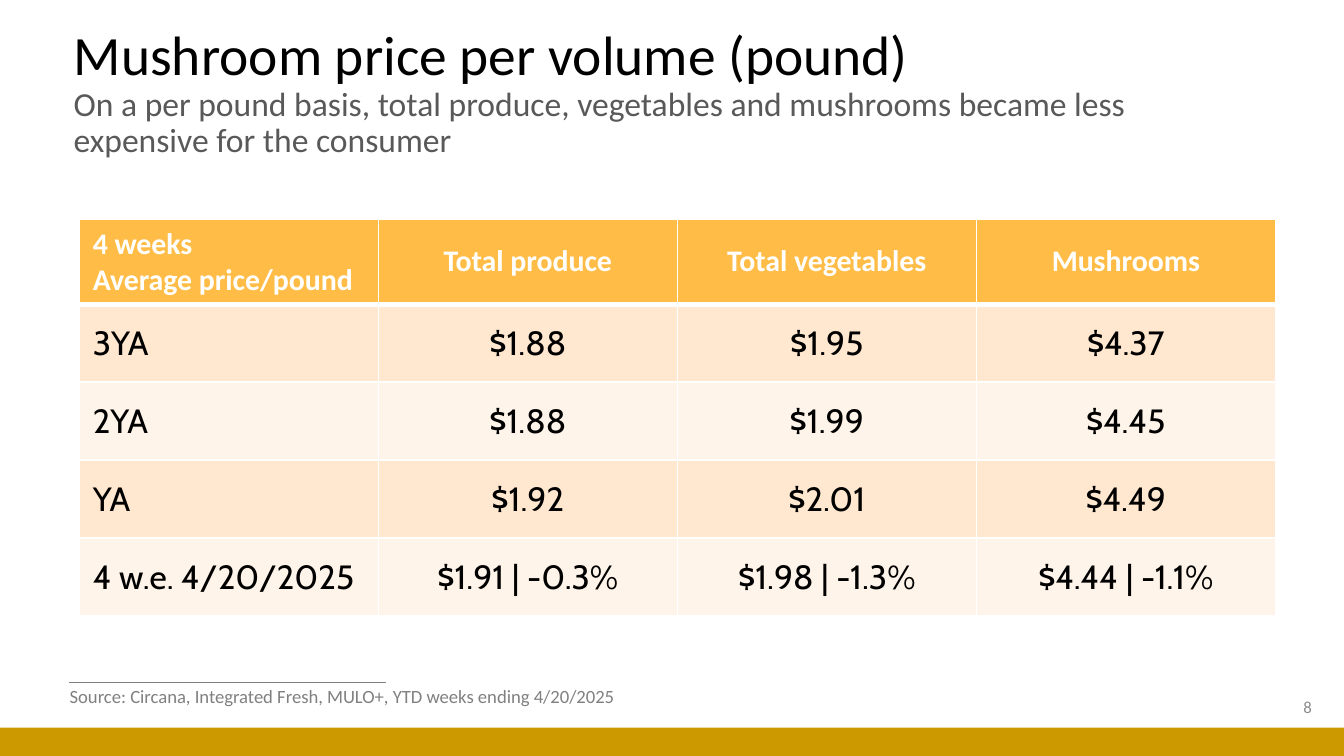
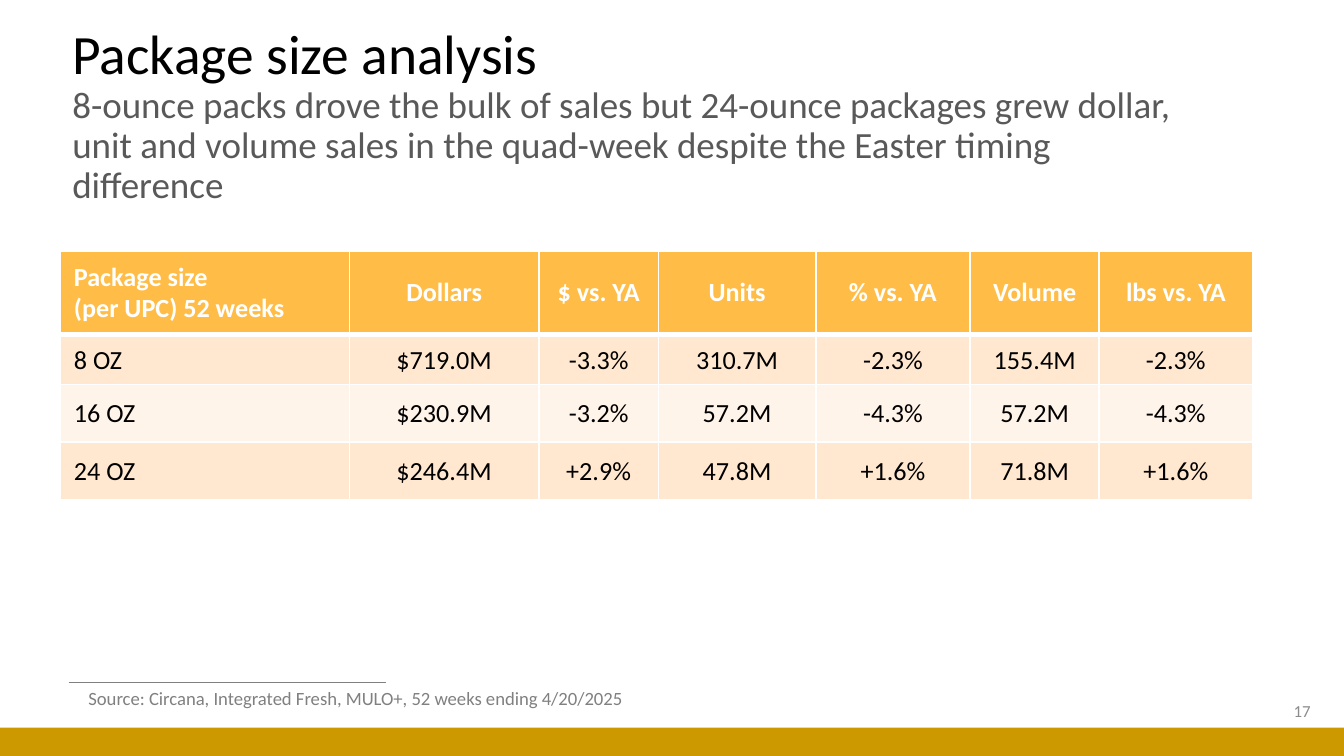
from dataclasses import dataclass

from lxml import etree
from pptx import Presentation
from pptx.dml.color import RGBColor
from pptx.enum.shapes import MSO_CONNECTOR, MSO_SHAPE
from pptx.enum.text import MSO_ANCHOR, PP_ALIGN
from pptx.oxml.ns import qn
from pptx.util import Inches, Pt

LEFT, CENTER, RIGHT = PP_ALIGN.LEFT, PP_ALIGN.CENTER, PP_ALIGN.RIGHT
MIDDLE, TOP = MSO_ANCHOR.MIDDLE, MSO_ANCHOR.TOP
RECTANGLE, STRAIGHT = MSO_SHAPE.RECTANGLE, MSO_CONNECTOR.STRAIGHT


@dataclass(frozen=True)
class Theme:
    font: str = "Calibri"
    accent_font: str = "Cabin"
    black: str = "000000"
    white: str = "FFFFFF"
    subtitle: str = "595959"
    source: str = "808080"
    page: str = "8C8C8C"
    band: str = "CC9900"
    header: str = "FFBD47"
    stripes: tuple = ("FFE8CF", "FFF4E9")
    title_size: float = 29.7
    source_size: float = 10
    page_size: float = 9


THEME = Theme()
SLIDE_WIDTH = 10
SLIDE_HEIGHT = SLIDE_WIDTH * 9 / 16

PRICE_ROWS = [
    ["4 weeks\nAverage price/pound", "Total produce", "Total vegetables", "Mushrooms"],
    ["3YA", "$1.88", "$1.95", "$4.37"],
    ["2YA", "$1.88", "$1.99", "$4.45"],
    ["YA", "$1.92", "$2.01", "$4.49"],
    ["4 w.e. 4/20/2025", "$1.91 | -0.3%", "$1.98 | -1.3%", "$4.44 | -1.1%"],
]
PACKAGE_ROWS = [
    ["Package size \v(per UPC) 52 weeks", "Dollars", "$ vs. YA", "Units",
     "% vs. YA", "Volume", "lbs vs. YA"],
    ["8 OZ", "$719.0M", "-3.3%", "310.7M", "-2.3%", "155.4M", "-2.3%"],
    ["16 OZ", "$230.9M", "-3.2%", "57.2M", "-4.3%", "57.2M", "-4.3%"],
    ["24 OZ", "$246.4M", "+2.9%", "47.8M", "+1.6%", "71.8M", "+1.6%"],
]


def style_font(font, size, color, name=THEME.font, bold=False):
    for attribute, value in {"size": Pt(size), "name": name, "bold": bold}.items():
        setattr(font, attribute, value)
    font.color.rgb = RGBColor.from_string(color)


def add_text_frame(slide, box, anchor):
    frame = slide.shapes.add_textbox(*map(Inches, box)).text_frame
    frame.word_wrap = True
    frame.vertical_anchor = anchor
    return frame


def add_title(slide, box, title, subtitle, subtitle_size):
    paragraph = add_text_frame(slide, box, MIDDLE).paragraphs[0]
    paragraph.line_spacing = 0.9
    heading = paragraph.add_run()
    heading.text = title
    style_font(heading.font, THEME.title_size, THEME.black)
    paragraph.add_line_break()
    message = paragraph.add_run()
    message.text = subtitle
    style_font(message.font, subtitle_size, THEME.subtitle)


def add_label(slide, box, text, size, color, align=LEFT, anchor=TOP):
    paragraph = add_text_frame(slide, box, anchor).paragraphs[0]
    paragraph.alignment = align
    run = paragraph.add_run()
    run.text = text
    style_font(run.font, size, color)


def add_footer(slide, source, source_box, page, page_box):
    rule = slide.shapes.add_connector(
        STRAIGHT, Inches(0.51), Inches(5.08), Inches(2.87), Inches(5.08))
    rule.line.color.rgb = RGBColor.from_string(THEME.source)
    rule.line.width = Pt(0.5)
    etree.SubElement(rule._element.spPr, qn("a:effectLst"))

    band_height = 0.21
    band = slide.shapes.add_shape(
        RECTANGLE, 0, Inches(SLIDE_HEIGHT - band_height),
        Inches(SLIDE_WIDTH), Inches(band_height))
    band.shadow.inherit = False
    band.fill.solid()
    band.fill.fore_color.rgb = RGBColor.from_string(THEME.band)
    band.line.fill.background()

    add_label(slide, source_box, source, THEME.source_size, THEME.source)
    add_label(slide, page_box, page, THEME.page_size, THEME.page, RIGHT, MIDDLE)


def set_borders(cell, widths):
    """Draw white borders; widths maps a side (L, R, T, B) to points."""
    properties = cell._tc.get_or_add_tcPr()
    for side, width in widths.items():
        line = etree.SubElement(properties, qn(f"a:ln{side}"), w=str(Pt(width)))
        fill = etree.SubElement(line, qn("a:solidFill"))
        etree.SubElement(fill, qn("a:srgbClr"), val=THEME.white)


def format_cell(cell, text, row, column, header_size, body_size, body_font):
    is_header, is_label = row == 0, column == 0
    # Borders come before the fill in the cell properties.
    set_borders(cell, {"L": 1, "R": 1, "T": 3 if row == 1 else 1,
                       "B": 3 if is_header else 1})
    cell.fill.solid()
    cell.fill.fore_color.rgb = RGBColor.from_string(
        THEME.header if is_header else THEME.stripes[(row - 1) % 2])
    cell.vertical_anchor = MIDDLE
    side = 0.1 if is_header or is_label else 0.01
    margins = {"margin_left": side, "margin_right": side,
               "margin_top": 0.05 if is_header else 0.01,
               "margin_bottom": 0.05 if is_header else 0}
    for attribute, value in margins.items():
        setattr(cell, attribute, Inches(value))
    cell.text_frame.text = text
    for paragraph in cell.text_frame.paragraphs:
        paragraph.alignment = LEFT if is_label else CENTER
        for run in paragraph.runs:
            if is_header:
                style_font(run.font, header_size, THEME.white, bold=True)
            else:
                style_font(run.font, body_size, THEME.black, body_font)


def add_data_table(slide, origin, rows, widths, heights,
                   header_size, body_size, body_font=THEME.font):
    box = (*origin, sum(widths), sum(heights))
    table = slide.shapes.add_table(
        len(rows), len(widths), *map(Inches, box)).table
    for column, width in zip(table.columns, widths):
        column.width = Inches(width)
    for table_row, height in zip(table.rows, heights):
        table_row.height = Inches(height)
    for r, values in enumerate(rows):
        for c, value in enumerate(values):
            format_cell(table.cell(r, c), value, r, c,
                        header_size, body_size, body_font)


def build_price_slide(slide):
    add_footer(slide,
               "Source: Circana, Integrated Fresh, MULO+, YTD weeks ending 4/20/2025",
               (0.42, 5.05, 4.41, 0.27), "8", (7.61, 5.11, 2.25, 0.3))
    add_title(slide, (0.45, 0.22, 8.74, 0.95), "Mushroom price per volume (pound)",
              "On a per pound basis, total produce, vegetables and mushrooms "
              "became less expensive for the consumer", 18)
    add_data_table(slide, (0.59, 1.63), PRICE_ROWS, [8.9 / 4] * 4,
                   [0.63] + [0.58] * 4, 16, 18, THEME.accent_font)


def build_package_slide(slide):
    add_footer(slide,
               "Source: Circana, Integrated Fresh, MULO+, 52 weeks ending 4/20/2025",
               (0.56, 5.06, 4.26, 0.27), "17", (7.6, 5.14, 2.25, 0.3))
    add_title(slide, (0.44, 0.34, 8.53, 1.06), "Package size analysis",
              "8-ounce packs drove the bulk of sales but 24-ounce packages grew "
              "dollar, unit and volume sales in the quad-week despite the Easter "
              "timing difference", 19.8)
    add_data_table(slide, (0.45, 1.87), PACKAGE_ROWS,
                   [2.15, 1.41, 0.89, 1.17, 1.15, 0.96, 1.14],
                   [0.62, 0.37, 0.43, 0.43], 14, 14)


def main():
    deck = Presentation()
    deck.slide_width, deck.slide_height = Inches(SLIDE_WIDTH), Inches(SLIDE_HEIGHT)
    for build in (build_price_slide, build_package_slide):
        build(deck.slides.add_slide(deck.slide_layouts[6]))
    deck.save("out.pptx")


if __name__ == "__main__":
    main()
